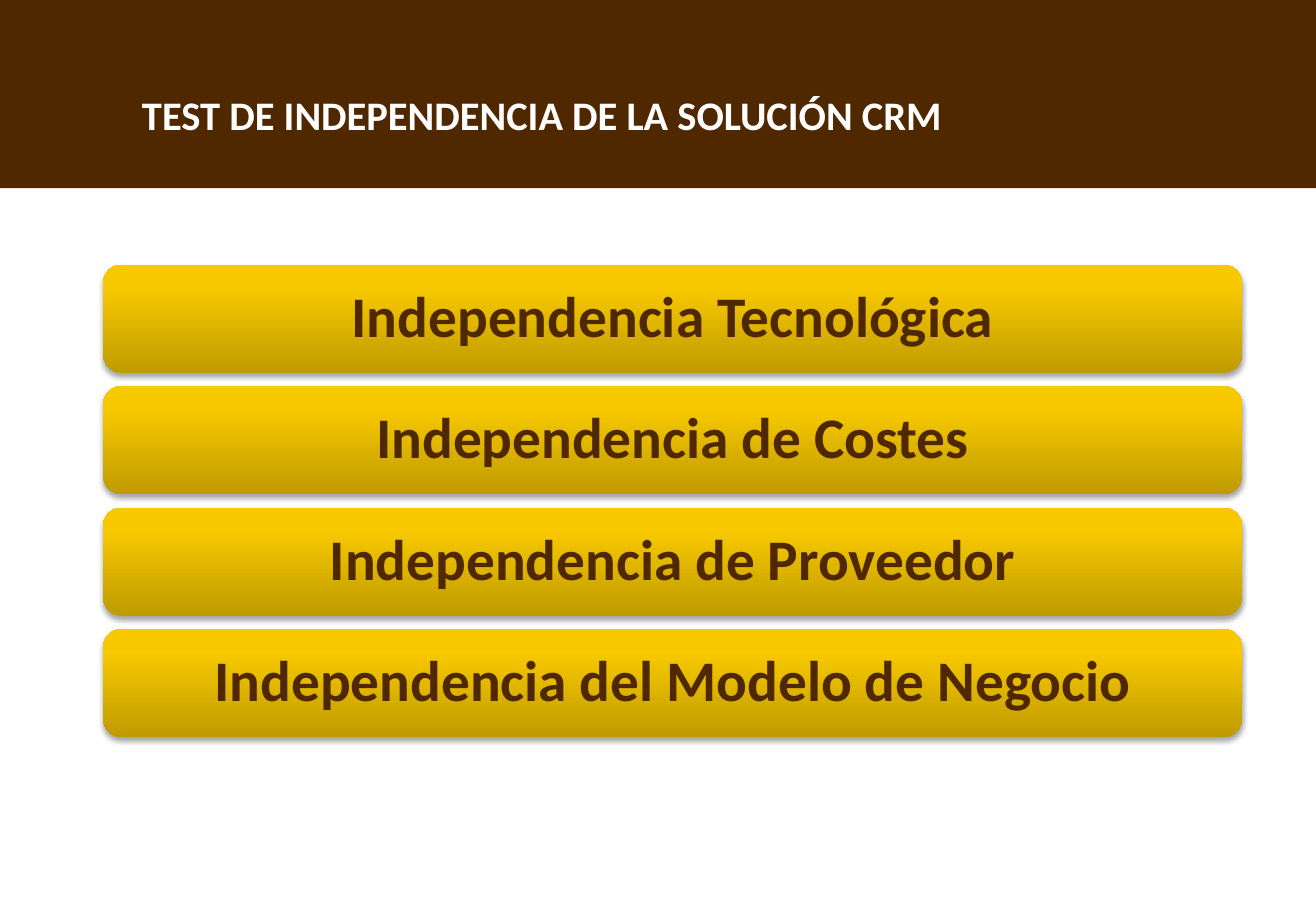
import copy

import pptx
import pptx.dml.color
import pptx.enum.shapes
import pptx.enum.text
import pptx.oxml
import pptx.oxml.ns
import pptx.util

WIDTH, HEIGHT = 10.83, 7.5
BROWN, WHITE = "502800", "FFFFFF"
GOLD_STOPS = [(0, "BF9B00"), (0.8, "F8C900"), (1, "F9CA00")]
SHADOW = (
    f'<a:outerShdw {pptx.oxml.ns.nsdecls("a")} blurRad="40000" dist="23000" dir="5400000" '
    'rotWithShape="0"><a:srgbClr val="000000"><a:alpha val="35000"/></a:srgbClr></a:outerShdw>'
)
TOPICS = [
    "Independencia Tecnológica",
    "Independencia de Costes",
    "Independencia de Proveedor",
    "Independencia del Modelo de Negocio",
]


def color(value):
    return pptx.dml.color.RGBColor.from_string(value)


def write(box, text, size, ink, align="LEFT", margin=0.1, line_spacing=1.0):
    """Put one bold, vertically centred paragraph in a box."""
    frame = box.text_frame
    frame.word_wrap = True
    frame.vertical_anchor = pptx.enum.text.MSO_ANCHOR.MIDDLE
    frame.margin_left = frame.margin_right = pptx.util.Inches(margin)
    frame.margin_top = frame.margin_bottom = pptx.util.Inches(margin / 2)
    para = frame.paragraphs[0]
    para.alignment = pptx.enum.text.PP_ALIGN[align]
    para.line_spacing = line_spacing
    span = para.add_run()
    span.text = text
    span.font.name = "Calibri"
    span.font.size = pptx.util.Pt(size)
    span.font.bold = True
    span.font.color.rgb = color(ink)


class Page:
    """A slide whose places are given as shares of its width and height."""

    def __init__(self, deck):
        self.deck = deck
        self.shapes = deck.slides.add_slide(deck.slide_layouts[6]).shapes

    def place(self, left, top, width, height):
        across, down = self.deck.slide_width, self.deck.slide_height
        return [round(share * full) for share, full in
                zip((left, top, width, height), (across, down, across, down))]

    def shape(self, kind, *area):
        box = self.shapes.add_shape(pptx.enum.shapes.MSO_SHAPE[kind], *self.place(*area))
        box.shadow.inherit = False
        box.line.fill.background()
        return box

    def band(self, *area):
        box = self.shape("RECTANGLE", *area)
        box.fill.solid()
        box.fill.fore_color.rgb = color(BROWN)

    def title(self, text, *area):
        write(self.shapes.add_textbox(*self.place(*area)), text, 24, WHITE)

    def gold_bar(self, text, *area):
        box = self.shape("ROUNDED_RECTANGLE", *area)
        box.fill.gradient()
        box.fill.gradient_angle = 90
        properties = box._element.spPr
        stops = properties.find(".//" + pptx.oxml.ns.qn("a:gsLst"))
        stops.append(copy.deepcopy(stops[-1]))
        for stop, (position, tone) in zip(box.fill.gradient_stops, GOLD_STOPS):
            stop.position = position
            stop.color.rgb = color(tone)
        effects = properties.find(pptx.oxml.ns.qn("a:effectLst"))
        effects.append(pptx.oxml.parse_xml(SHADOW))
        write(box, text, 34, BROWN, align="CENTER", margin=0.14, line_spacing=0.9)


def main():
    deck = pptx.Presentation()
    deck.slide_width = pptx.util.Inches(WIDTH)
    deck.slide_height = pptx.util.Inches(HEIGHT)
    page = Page(deck)
    page.band(0, 0, 1, 1.55 / HEIGHT)
    for row, topic in enumerate(TOPICS):
        page.gold_bar(topic, 0.85 / WIDTH, (2.18 + row) / HEIGHT, 9.37 / WIDTH, 0.89 / HEIGHT)
    page.title("TEST DE INDEPENDENCIA DE LA SOLUCIÓN CRM",
               1.07 / WIDTH, 0.69 / HEIGHT, 7.76 / WIDTH, 0.5 / HEIGHT)
    deck.save("out.pptx")


if __name__ == "__main__":
    main()
